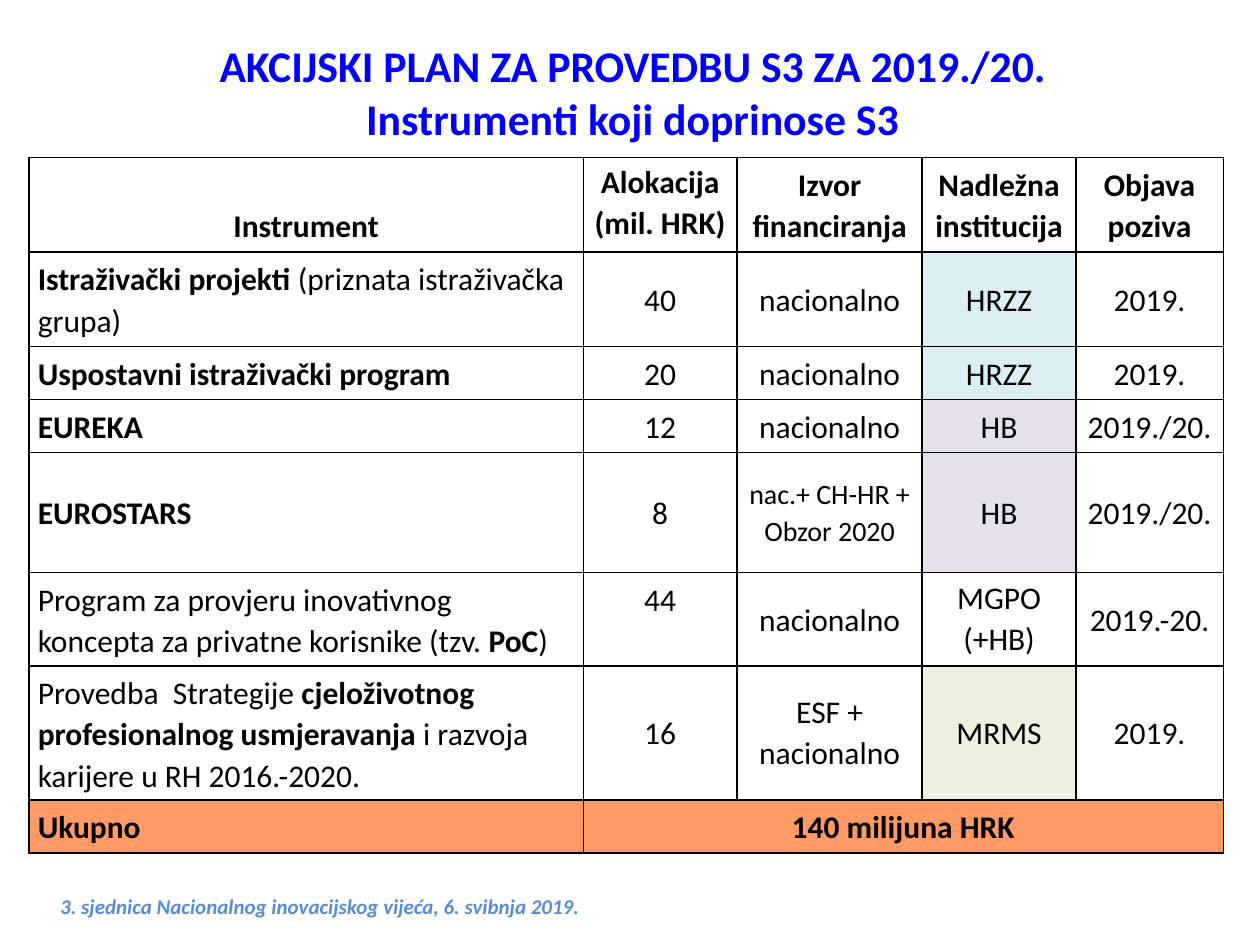
from lxml.etree import SubElement
from pptx import Presentation
from pptx.dml.color import RGBColor
from pptx.enum.text import MSO_ANCHOR, MSO_AUTO_SIZE, PP_ALIGN
from pptx.oxml.ns import qn
from pptx.util import Inches, Pt

COLORS = {
    "title": "0000FF", "footer": "558ED5", "text": "000000", "border": "000000",
    "plain": "FFFFFF", "HRZZ": "DBEEF4", "HB": "E6E0EC", "MRMS": "EBF1DE",
    "total": "FF9966",
}
COLUMN_WIDTHS = [4.4, 1.22, 1.47, 1.22, 1.17]
ROW_HEIGHTS = [0.75, 0.75, 0.42, 0.42, 0.95, 0.74, 1.06, 0.42]
HEADINGS = ["Instrument", "Alokacija\n(mil. HRK)", "Izvor financiranja",
            "Nadležna institucija", "Objava poziva"]
INSTRUMENTS = [
    ["*Istraživački projekti *(priznata istraživačka grupa)",
     "40", "nacionalno", "HRZZ", "2019."],
    ["*Uspostavni istraživački program*", "20", "nacionalno", "HRZZ", "2019."],
    ["*EUREKA*", "12", "nacionalno", "HB", "2019./20."],
    ["*EUROSTARS*", "8", "nac.+ CH-HR + Obzor 2020", "HB", "2019./20."],
    ["Program za provjeru inovativnog koncepta za privatne korisnike (tzv. *PoC*)",
     "44", "nacionalno", "MGPO\n(+HB)", "2019.-20."],
    ["Provedba  Strategije *cjeloživotnog profesionalnog usmjeravanja *"
     "i razvoja karijere u RH 2016.-2020.",
     "16", "ESF +\nnacionalno", "MRMS", "2019."],
]
TOTAL = ["*Ukupno*", "*140 milijuna HRK*"]


def set_attributes(target, values):
    """Set every named attribute on the target."""
    for name, value in values.items():
        setattr(target, name, value)


def write_text(frame, text, color, size, align, spacing=None, **style):
    """Write one paragraph per line, with words between asterisks in bold."""
    lines = text.split("\n")
    for index, line in enumerate(lines):
        paragraph = frame.paragraphs[0] if index == 0 else frame.add_paragraph()
        paragraph.alignment = align
        if spacing and index == len(lines) - 1:
            paragraph.line_spacing = spacing
        for part, words in enumerate(line.split("*")):
            if words:
                run = paragraph.add_run()
                run.text = words
                font = {"name": "Calibri", "size": Pt(size), "bold": part % 2 == 1}
                set_attributes(run.font, font | style)
                run.font.color.rgb = RGBColor.from_string(COLORS[color])


def add_borders(cell):
    """Draw a thin line on all four sides of a cell."""
    properties = cell._tc.get_or_add_tcPr()
    for side in ("a:lnL", "a:lnR", "a:lnT", "a:lnB"):
        line = SubElement(properties, qn(side), w=str(Pt(0.96)))
        fill = SubElement(line, qn("a:solidFill"))
        SubElement(fill, qn("a:srgbClr"), val=COLORS["border"])


def format_cell(cell, fill, anchor=MSO_ANCHOR.MIDDLE):
    """Give a cell its borders, fill, margins and anchor."""
    add_borders(cell)
    cell.fill.solid()
    cell.fill.fore_color.rgb = RGBColor.from_string(COLORS[fill])
    set_attributes(cell, {
        "margin_left": Inches(0.07), "margin_right": Inches(0.07),
        "margin_top": Inches(0.05), "margin_bottom": Inches(0.05),
        "vertical_anchor": anchor,
    })


def add_title(slide):
    """Place and write the two-line title."""
    title = slide.shapes.title
    set_attributes(title, {"left": Inches(0.22), "top": Inches(0.23),
                           "width": Inches(9.6), "height": Inches(0.99)})
    set_attributes(title.text_frame, {"auto_size": MSO_AUTO_SIZE.NONE,
                                      "vertical_anchor": MSO_ANCHOR.MIDDLE})
    write_text(title.text_frame,
               "AKCIJSKI PLAN ZA PROVEDBU S3 ZA 2019./20.\nInstrumenti koji doprinose S3",
               "title", 25, PP_ALIGN.CENTER, bold=True)


def add_footer(slide):
    """Add the session line at the bottom."""
    footer = slide.shapes.add_textbox(Inches(0.04), Inches(7.04), Inches(5), Inches(0.3))
    footer.text_frame.word_wrap = True
    write_text(footer.text_frame,
               "3. sjednica Nacionalnog inovacijskog vijeća, 6. svibnja 2019.",
               "footer", 12, PP_ALIGN.CENTER, bold=True, italic=True)


def add_instruments(slide):
    """Add the table of instruments with its heading and total rows."""
    table = slide.shapes.add_table(
        len(ROW_HEIGHTS), len(COLUMN_WIDTHS), Inches(0.23), Inches(1.25),
        Inches(sum(COLUMN_WIDTHS)), Inches(sum(ROW_HEIGHTS))).table
    set_attributes(table, {"first_row": False, "horz_banding": False})
    for column, width in zip(table.columns, COLUMN_WIDTHS):
        column.width = Inches(width)
    for row, height in zip(table.rows, ROW_HEIGHTS):
        row.height = Inches(height)

    for column, heading in enumerate(HEADINGS):
        cell = table.cell(0, column)
        format_cell(cell, "plain", MSO_ANCHOR.TOP if column else MSO_ANCHOR.BOTTOM)
        write_text(cell.text_frame, heading, "text", 18, PP_ALIGN.CENTER, 1.07, bold=True)

    for row, instrument in enumerate(INSTRUMENTS, start=1):
        for column, text in enumerate(instrument):
            cell = table.cell(row, column)
            format_cell(cell, text if text in COLORS else "plain",
                        MSO_ANCHOR.TOP if text == "44" else MSO_ANCHOR.MIDDLE)
            write_text(cell.text_frame, text, "text", 16 if "Obzor" in text else 18,
                       PP_ALIGN.CENTER if column else PP_ALIGN.LEFT, 1.07)

    last = len(ROW_HEIGHTS) - 1
    table.cell(last, 1).merge(table.cell(last, len(COLUMN_WIDTHS) - 1))
    for cell in table.rows[last].cells:
        format_cell(cell, "total")
    for column, text in enumerate(TOTAL):
        write_text(table.cell(last, column).text_frame, text, "text", 18,
                   PP_ALIGN.CENTER if column else PP_ALIGN.LEFT, 1.07)


def main():
    """Build the slide and save it."""
    deck = Presentation()
    set_attributes(deck, {"slide_width": Inches(10), "slide_height": Inches(7.5)})
    slide = deck.slides.add_slide(deck.slide_layouts[5])
    add_footer(slide)
    add_title(slide)
    add_instruments(slide)
    deck.save("out.pptx")


if __name__ == "__main__":
    main()
